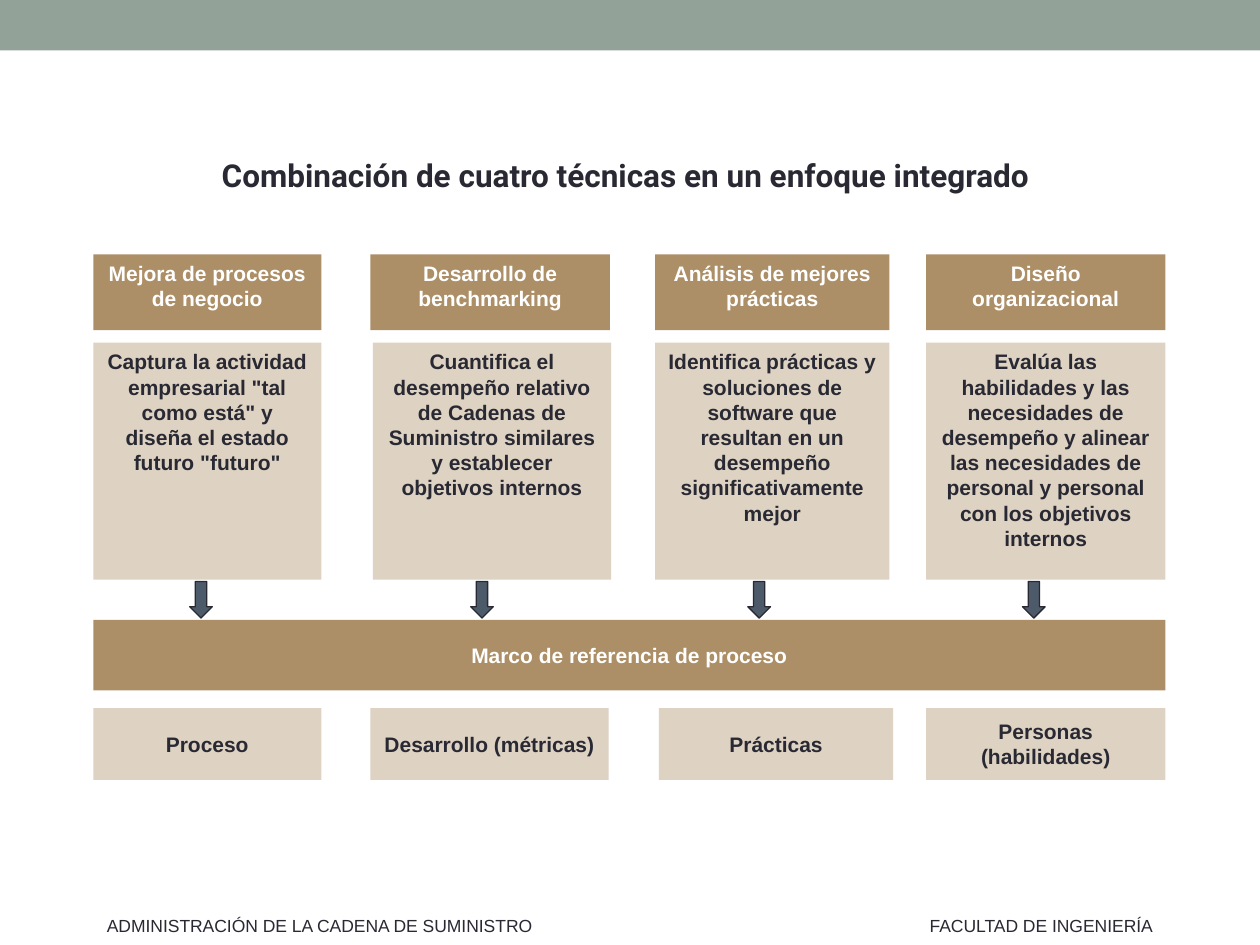
from pptx import Presentation
from pptx.dml.color import RGBColor
from pptx.enum.shapes import MSO_SHAPE
from pptx.enum.text import MSO_ANCHOR, MSO_AUTO_SIZE, PP_ALIGN
from pptx.util import Inches, Pt

COLORS = {
    "band": "93A299",
    "header": "AD8F67",
    "panel": "DED2C2",
    "arrow": "4C5A6A",
    "dark": "292934",
    "light": "FFFFFF",
}

COLUMNS = [
    {
        "lefts": (0.74, 0.74, 0.74), "widths": (1.81, 1.81, 1.81), "arrow": 1.45,
        "texts": (
            "Mejora de procesos de negocio",
            'Captura la actividad empresarial "tal como está" y diseña el estado futuro "futuro"',
            "Proceso",
        ),
    },
    {
        "lefts": (2.94, 2.96, 2.94), "widths": (1.9, 1.89, 1.89), "arrow": 3.68,
        "texts": (
            "Desarrollo de benchmarking",
            "Cuantifica el desempeño relativo de Cadenas de Suministro similares "
            "y establecer objetivos internos",
            "Desarrollo (métricas)",
        ),
    },
    {
        "lefts": (5.2, 5.2, 5.23), "widths": (1.86, 1.86, 1.86), "arrow": 5.88,
        "texts": (
            "Análisis de mejores prácticas",
            "Identifica prácticas y soluciones de software que resultan en un "
            "desempeño significativamente mejor",
            "Prácticas",
        ),
    },
    {
        "lefts": (7.35, 7.35, 7.35), "widths": (1.9, 1.9, 1.9), "arrow": 8.06,
        "texts": (
            "Diseño organizacional",
            "Evalúa las habilidades y las necesidades de desempeño y alinear las "
            "necesidades de personal y personal con los objetivos internos",
            "Personas (habilidades)",
        ),
    },
]

ROWS = [
    (2.02, 0.6, "header", "light", MSO_ANCHOR.TOP),
    (2.72, 1.88, "panel", "dark", MSO_ANCHOR.TOP),
    (5.62, 0.57, "panel", "dark", MSO_ANCHOR.MIDDLE),
]


class SlideBuilder:
    def __init__(self, slide):
        self.slide = slide
        self.font = "Arial"

    def color(self, name):
        return RGBColor.from_string(COLORS[name])

    def add_text(self, shape, text, color, size=12, bold=True, font=None,
                 align=PP_ALIGN.CENTER, **paragraph_format):
        paragraph = shape.text_frame.paragraphs[0]
        run = paragraph.add_run()
        run.text = text
        for name, value in {"alignment": align, **paragraph_format}.items():
            setattr(paragraph, name, value)
        values = {"name": font or self.font, "size": Pt(size), "bold": bold}
        for name, value in values.items():
            setattr(run.font, name, value)
        run.font.color.rgb = self.color(color)

    def shape(self, kind, left, top, width, height, fill, line=None):
        shape = self.slide.shapes.add_shape(
            kind, Inches(left), Inches(top), Inches(width), Inches(height))
        shape.shadow.inherit = False
        shape.fill.solid()
        shape.fill.fore_color.rgb = self.color(fill)
        if line:
            shape.line.color.rgb = self.color(line)
            shape.line.width = Pt(0.75)
        else:
            shape.line.fill.background()
        return shape

    def box(self, left, top, width, height, fill, text, color, anchor):
        shape = self.shape(MSO_SHAPE.RECTANGLE, left, top, width, height, fill)
        shape.text_frame.word_wrap = True
        shape.text_frame.vertical_anchor = anchor
        self.add_text(shape, text, color)

    def arrow(self, left):
        shape = self.shape(MSO_SHAPE.RIGHT_ARROW, left, 4.67, 0.29, 0.18, "arrow", "dark")
        shape.rotation = 90

    def title(self, text):
        title = self.slide.shapes.title
        place = {"left": 0.75, "top": 1.07, "width": 8.43, "height": 1.1}
        for name, value in place.items():
            setattr(title, name, Inches(value))
        frame = {"vertical_anchor": MSO_ANCHOR.TOP, "auto_size": MSO_AUTO_SIZE.NONE}
        for name, value in frame.items():
            setattr(title.text_frame, name, value)
        self.add_text(title, text, "dark", size=18, font="Roboto",
                      line_spacing=1.4, space_before=Pt(3.6))

    def footer(self, left, width, text):
        shape = self.slide.shapes.add_textbox(
            Inches(left), Inches(7.21), Inches(width), Inches(0.27))
        shape.text_frame.word_wrap = False
        shape.text_frame.auto_size = MSO_AUTO_SIZE.SHAPE_TO_FIT_TEXT
        self.add_text(shape, text, "dark", size=10, bold=False, align=PP_ALIGN.LEFT)


def main():
    presentation = Presentation()
    presentation.slide_width = Inches(10)
    presentation.slide_height = Inches(7.5)
    builder = SlideBuilder(presentation.slides.add_slide(presentation.slide_layouts[5]))

    builder.shape(MSO_SHAPE.RECTANGLE, 0, 0, 10, 0.4, "band")
    builder.title("Combinación de cuatro técnicas en un enfoque integrado")
    for column in COLUMNS:
        cells = zip(ROWS, column["lefts"], column["widths"], column["texts"])
        for (top, height, fill, color, anchor), left, width, text in cells:
            builder.box(left, top, width, height, fill, text, color, anchor)
    builder.box(0.74, 4.92, 8.51, 0.56, "header",
                "Marco de referencia de proceso", "light", MSO_ANCHOR.MIDDLE)
    for column in COLUMNS:
        builder.arrow(column["arrow"])
    builder.footer(0.75, 3.63, "ADMINISTRACIÓN DE LA CADENA DE SUMINISTRO")
    builder.footer(7.28, 2.02, "FACULTAD DE INGENIERÍA")

    presentation.save("out.pptx")


if __name__ == "__main__":
    main()
